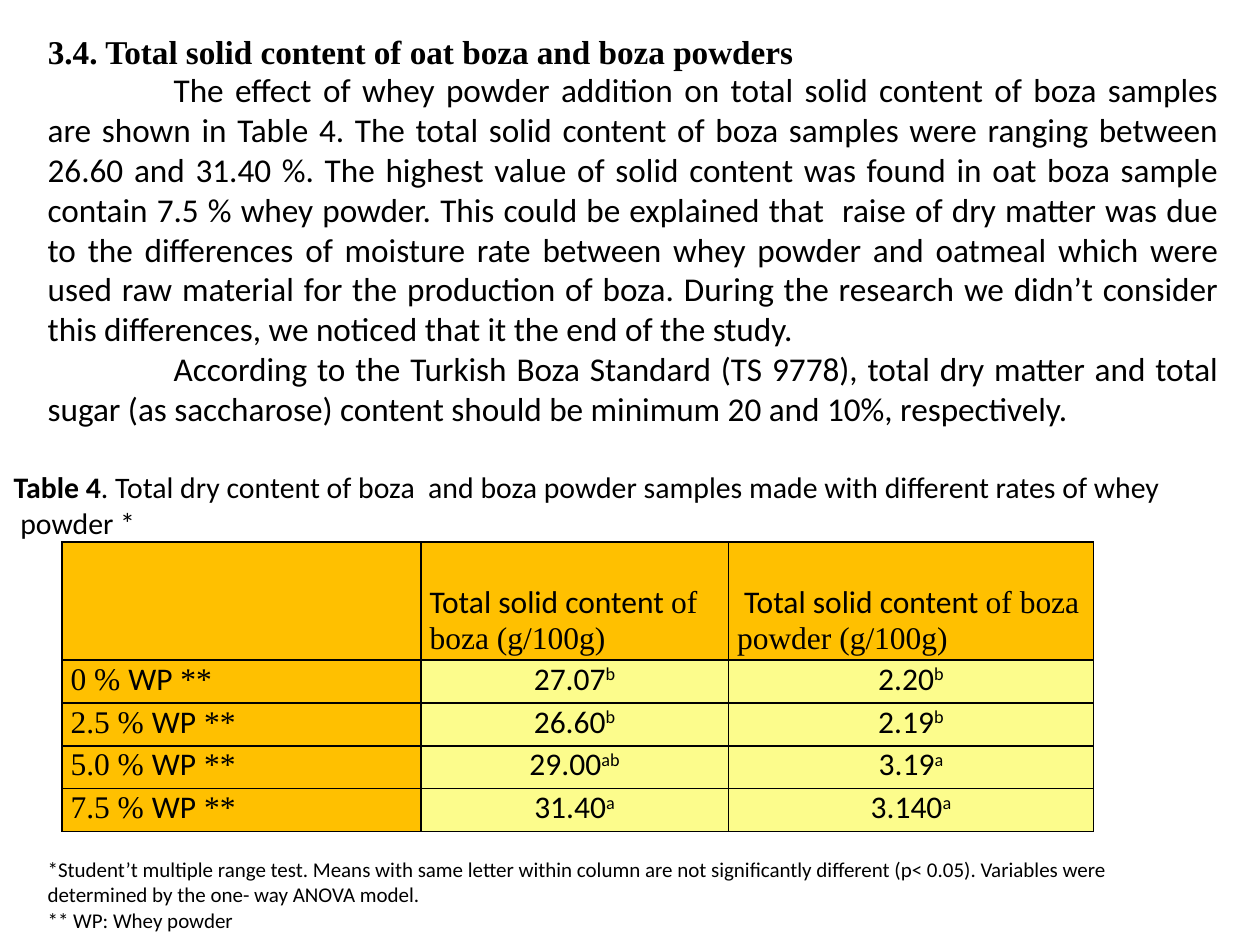
from pptx import Presentation
from pptx.dml.color import RGBColor
from pptx.enum.text import MSO_ANCHOR, MSO_AUTO_SIZE, PP_ALIGN
from pptx.oxml import parse_xml
from pptx.oxml.ns import nsdecls
from pptx.util import Inches, Pt

LEFT, MID, JUST = PP_ALIGN.LEFT, PP_ALIGN.CENTER, PP_ALIGN.JUSTIFY
TOP, BOTTOM = MSO_ANCHOR.TOP, MSO_ANCHOR.BOTTOM
SANS, SERIF = "Calibri", "Times New Roman"
BLACK, AMBER, CREAM = "000000", "FFC000", "FCFC8C"

# Content: a paragraph is a list of (text, style) runs
HEAD = "3.4. Total solid content of oat boza and boza powders"
BODY = [
    "The effect of whey powder addition on total solid content of boza samples "
    "are shown in Table 4. The total solid content of boza samples were ranging "
    "between 26.60 and 31.40 %. The highest value of solid content was found in "
    "oat boza sample contain 7.5 % whey powder. This could be explained that  "
    "raise of dry matter was due to the differences of moisture rate between whey "
    "powder and oatmeal which were used raw material for the production of boza. "
    "During the research we didn’t consider this differences, we noticed that it "
    "the end of the study.",
    "According to the Turkish Boza Standard (TS 9778), total dry matter and total "
    "sugar (as saccharose) content should be minimum 20 and 10%, respectively.",
]
CAPTION = [
    [("Table 4", {"bold": True}),
     (". Total dry content of boza  and boza powder samples made with different "
      "rates of whey", {})],
    [(" powder *", {})],
]
NOTES = [
    "*Student’t multiple range test. Means with same letter within column are not "
    "significantly different (p< 0.05). Variables were determined by the one- way "
    "ANOVA model.",
    "** WP: Whey powder",
]
HEADS = [
    ("", ""),
    ("Total solid content ", "of boza (g/100g)"),
    ("\u00a0Total solid content ", "of boza powder (g/100g)"),
]
ROWS = [  # rate, then value and group letter for boza and for powder
    ("0", ("27.07", "b"), ("2.20", "b")),
    ("2.5", ("26.60", "b"), ("2.19", "b")),
    ("5.0", ("29.00", "ab"), ("3.19", "a")),
    ("7.5", ("31.40", "a"), ("3.140", "a")),
]
COLS = [2.85, 2.44, 2.9]
HEAD_H, ROW_H = 0.94, 0.34


def color(code):
    return RGBColor.from_string(code)


def write(frame, paras, size, align=LEFT, indent=0):
    for i, runs in enumerate(paras):
        para = frame.paragraphs[0] if i == 0 else frame.add_paragraph()
        para.alignment = align
        para.space_before = Pt(0)
        if indent:
            para._p.get_or_add_pPr().set("indent", str(Inches(indent)))
        para.font.size = Pt(size)
        for text, style in runs:
            run = para.add_run()
            run.text = text
            font = run.font
            font.size = Pt(size)
            font.name = style.get("font", SANS)
            font.bold = style.get("bold", False)
            font.color.rgb = color(BLACK)
            if style.get("sup"):
                font._element.set("baseline", "30000")


def setup(frame):
    frame.word_wrap = True
    frame.auto_size = MSO_AUTO_SIZE.NONE
    frame.vertical_anchor = TOP
    return frame


def box(slide, x, y, w, h):
    shape = slide.shapes.add_textbox(Inches(x), Inches(y), Inches(w), Inches(h))
    return setup(shape.text_frame)


def border(cell):
    props = cell._tc.get_or_add_tcPr()
    for i, side in enumerate(("lnL", "lnR", "lnT", "lnB")):
        props.insert(i, parse_xml(
            f'<a:{side} {nsdecls("a")} w="{Pt(1)}"><a:solidFill>'
            f'<a:srgbClr val="{BLACK}"/></a:solidFill></a:{side}>'))


def fill(cell, runs, code, align=LEFT):
    cell.margin_left = cell.margin_right = Inches(0.07)
    cell.margin_top = cell.margin_bottom = 0
    cell.fill.solid()
    cell.fill.fore_color.rgb = color(code)
    border(cell)
    write(cell.text_frame, [runs], 18, align)


deck = Presentation()
deck.slide_width, deck.slide_height = Inches(10), Inches(7.5)
slide = deck.slides.add_slide(deck.slide_layouts[5])

# Heading and body share one left edge and meet without a gap
title = slide.shapes.title
title.left, title.top = Inches(0.28), Inches(0.2)
title.width, title.height = Inches(9.49), Inches(0.35)
frame = setup(title.text_frame)
frame.margin_bottom = 0
write(frame, [[(HEAD, {"font": SERIF, "bold": True})]], 19, JUST)

frame = box(slide, 0.28, 0.55, 9.49, 2.95)
frame.margin_top = 0
write(frame, [[(text, {})] for text in BODY], 19, JUST, indent=1)

# Caption and footnotes
write(box(slide, 0.01, 3.67, 9.76, 0.67), CAPTION, 17)
write(box(slide, 0.28, 6.75, 9.06, 0.71), [[(text, {})] for text in NOTES], 12)

# Table
table = slide.shapes.add_table(
    len(ROWS) + 1, len(COLS), Inches(0.49), Inches(4.3),
    Inches(sum(COLS)), Inches(HEAD_H + ROW_H * len(ROWS))).table
for col, width in zip(table.columns, COLS):
    col.width = Inches(width)
for i, row in enumerate(table.rows):
    row.height = Inches(ROW_H if i else HEAD_H)

for c, (lead, rest) in enumerate(HEADS):
    cell = table.cell(0, c)
    runs = [(lead, {}), (rest, {"font": SERIF})] if lead else []
    fill(cell, runs, AMBER)
    cell.vertical_anchor = BOTTOM
    cell.margin_bottom = Inches(0.03)

for r, (rate, *pairs) in enumerate(ROWS, 1):
    label = [(f"{rate} % ", {"font": SERIF}), ("WP", {}), (" **", {"font": SERIF})]
    fill(table.cell(r, 0), label, AMBER)
    for c, (value, group) in enumerate(pairs, 1):
        fill(table.cell(r, c), [(value, {}), (group, {"sup": True})], CREAM, MID)

deck.save("out.pptx")
